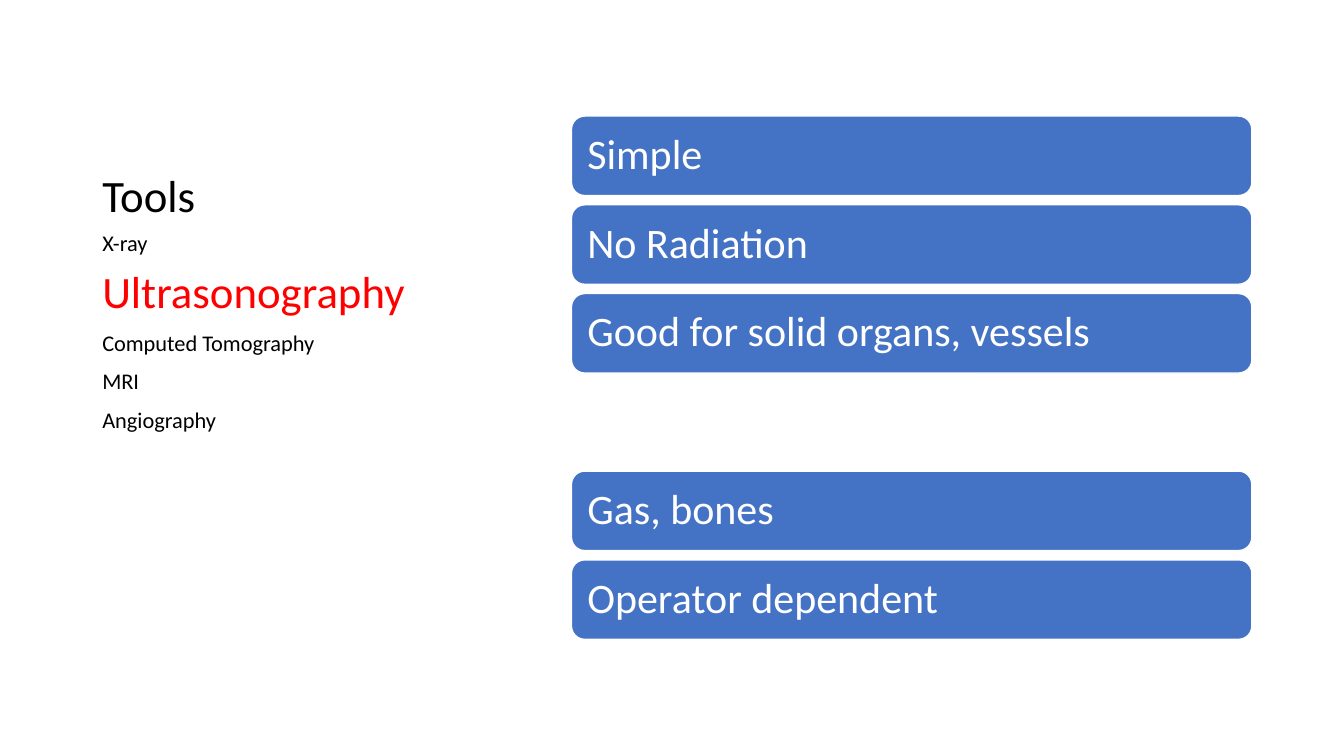
from pptx import Presentation
from pptx.dml.color import RGBColor as RGB
from pptx.enum.shapes import MSO_SHAPE as SHAPE
from pptx.enum.text import MSO_ANCHOR as ANCHOR, PP_ALIGN as ALIGN
from pptx.util import Pt

COLORS = {"bar": "4472C4", "white": "FFFFFF", "black": "000000", "red": "FF0000"}
FONT = "Calibri"

# Left column
COLUMN_LEFT, COLUMN_WIDTH = 66, 310
TOOLS = ["X-ray", "Ultrasonography", "Computed Tomography", "MRI", "Angiography"]
CURRENT_TOOL = "Ultrasonography"

# Bars: an empty slot separates the strengths from the limits
BAR_LEFT, BAR_TOP, BAR_WIDTH, BAR_HEIGHT = 408.2, 82.9, 486, 56.8
BAR_PITCH = 63.4
BARS = ["Simple", "No Radiation", "Good for solid organs, vessels", None,
        "Gas, bones", "Operator dependent"]


def color(name):
    return RGB.from_string(COLORS[name])


def write(p, text, size=16, fill="black", before=0):
    p.alignment = ALIGN.LEFT
    p.line_spacing = 0.9
    p.space_before = Pt(before)
    r = p.add_run()
    r.text = text
    r.font.name = FONT
    r.font.size = Pt(size)
    r.font.color.rgb = color(fill)


def add_column_box(slide, top, height, anchor):
    sp = slide.shapes.add_textbox(Pt(COLUMN_LEFT), Pt(top), Pt(COLUMN_WIDTH), Pt(height))
    tf = sp.text_frame
    tf.word_wrap = True
    tf.vertical_anchor = anchor
    return tf


def add_title(slide, text):
    tf = add_column_box(slide, 36, 126, ANCHOR.BOTTOM)
    write(tf.paragraphs[0], text, size=32)


def add_tool_list(slide, tools):
    tf = add_column_box(slide, 162, 300, ANCHOR.TOP)
    for i, tool in enumerate(tools):
        p = tf.add_paragraph() if i else tf.paragraphs[0]
        style = {"size": 32, "fill": "red"} if tool == CURRENT_TOOL else {}
        write(p, tool, before=10 if i else 0, **style)


def add_bar(slide, slot, text):
    sp = slide.shapes.add_shape(SHAPE.ROUNDED_RECTANGLE, Pt(BAR_LEFT),
                                Pt(BAR_TOP + slot * BAR_PITCH), Pt(BAR_WIDTH), Pt(BAR_HEIGHT))
    sp.shadow.inherit = False
    sp.fill.solid()
    sp.fill.fore_color.rgb = color("bar")
    sp.line.color.rgb = color("white")
    sp.line.width = Pt(1)
    tf = sp.text_frame
    tf.word_wrap = True
    tf.vertical_anchor = ANCHOR.MIDDLE
    tf.margin_left = tf.margin_right = Pt(8.6)
    write(tf.paragraphs[0], text, size=30, fill="white")


def main():
    prs = Presentation()
    prs.slide_width, prs.slide_height = Pt(960), Pt(540)
    slide = prs.slides.add_slide(prs.slide_layouts[6])

    add_title(slide, "Tools")
    for slot, text in enumerate(BARS):
        if text:
            add_bar(slide, slot, text)
    add_tool_list(slide, TOOLS)

    prs.save("out.pptx")


if __name__ == "__main__":
    main()
